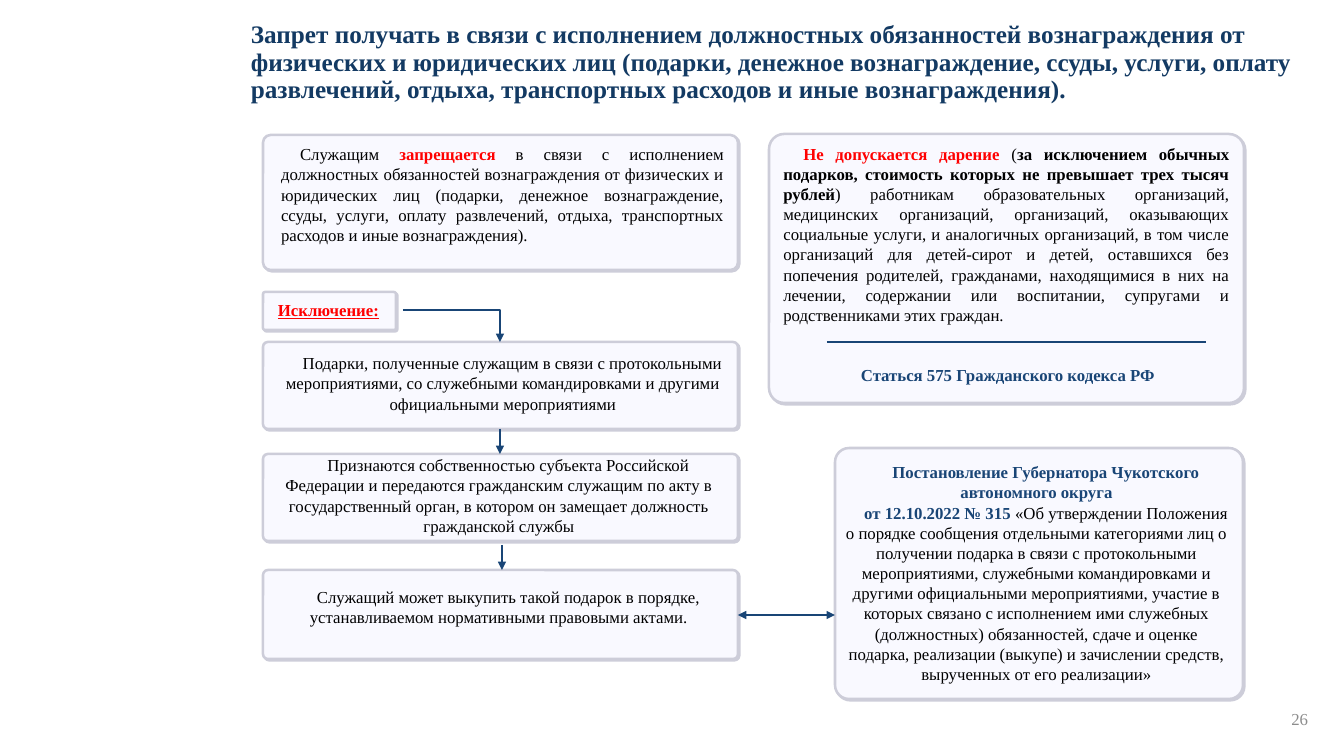
import pptx
import pptx.dml.color
import pptx.enum.shapes
import pptx.enum.text
import pptx.oxml.ns
import pptx.util
from lxml import etree

RGB = pptx.dml.color.RGBColor
ALIGN = pptx.enum.text.PP_ALIGN
ANCHOR = pptx.enum.text.MSO_ANCHOR
KIND = pptx.enum.shapes.MSO_CONNECTOR
Pt = pptx.util.Pt
qn = pptx.oxml.ns.qn

BLACK = RGB(0x00, 0x00, 0x00)
RED = RGB(0xFF, 0x00, 0x00)
NAVY = RGB(0x13, 0x3A, 0x63)
BLUE = RGB(0x19, 0x45, 0x76)
GRAY = RGB(0x8C, 0x8C, 0x8C)
PALE = RGB(0xF9, 0xF9, 0xFF)
EDGE = RGB(0xCD, 0xCD, 0xD9)

SCALE = 914400 / 100.8
LEFT, WIDE = 263, 475

PLAIN = {"color": BLACK, "bold": False}
STRONG = {"color": BLACK, "bold": True}
ALERT = {"color": RED, "bold": True}
MARK = {"color": RED, "bold": True, "underline": True}
LAW = {"color": BLUE, "bold": True}
HEAD = {"color": NAVY, "bold": True, "size": Pt(18)}
PAGE = {"color": GRAY, "bold": False}

BODY = {"alignment": ALIGN.JUSTIFY, "space_after": Pt(3)}
MID = {"alignment": ALIGN.CENTER, "space_after": Pt(3)}
TIGHT = {"alignment": ALIGN.CENTER}
FULL = {"alignment": ALIGN.JUSTIFY}
TITLE = {"alignment": ALIGN.LEFT, "line_spacing": 0.9}
RIGHT = {"alignment": ALIGN.RIGHT}


def px(num):
    return round(num * SCALE)


def apply(item, form):
    for name, value in form.items():
        setattr(item, name, value)


def write(frame, paras, form, indent=19):
    frame.word_wrap = True
    for i, runs in enumerate(paras):
        para = frame.paragraphs[0] if i == 0 else frame.add_paragraph()
        apply(para, form)
        para._p.get_or_add_pPr().set("indent", str(px(indent)))
        for text, look in runs:
            run = para.add_run()
            run.text = text
            font = {"name": "Times New Roman", "size": Pt(12), **look}
            run.font.color.rgb = font.pop("color")
            apply(run.font, font)


def add_box(slide, x, y, w, h):
    shape = slide.shapes.add_shape(
        pptx.enum.shapes.MSO_SHAPE.ROUNDED_RECTANGLE, px(x), px(y), px(w), px(h))
    shape.adjustments[0] = 0.056
    shape.fill.solid()
    shape.fill.fore_color.rgb = PALE
    shape.line.color.rgb = EDGE
    shape.line.width = Pt(1.8)
    shape.shadow.inherit = False
    glow = etree.SubElement(
        shape._element.spPr.find(qn("a:effectLst")), qn("a:outerShdw"),
        dist=str(Pt(1.4)), dir="2700000", algn="ctr", rotWithShape="0")
    etree.SubElement(glow, qn("a:srgbClr"), val=str(EDGE))
    shape.text_frame.vertical_anchor = ANCHOR.TOP
    return shape


def add_text(slide, x, y, w, h, paras, form, indent=19, **extra):
    frame = slide.shapes.add_textbox(px(x), px(y), px(w), px(h)).text_frame
    apply(frame, extra)
    write(frame, paras, form, indent)


def add_line(slide, x1, y1, x2, y2, ends=(), bent=False):
    line = slide.shapes.add_connector(
        KIND.ELBOW if bent else KIND.STRAIGHT, px(x1), px(y1), px(x2), px(y2))
    line.line.color.rgb = BLUE
    line.line.width = Pt(1)
    props = line._element.spPr
    if bent:
        props.find(qn("a:prstGeom")).set("prst", "bentConnector2")
    for end in ends:
        etree.SubElement(props.find(qn("a:ln")), qn(end), type="triangle")
    etree.SubElement(props, qn("a:effectLst"))


def main():
    deck = pptx.Presentation()
    deck.slide_width, deck.slide_height = px(1344), px(756)
    slide = deck.slides.add_slide(deck.slide_layouts[6])

    add_text(slide, 241, 13, 1093, 100, [[(
        "Запрет получать в связи с исполнением должностных обязанностей "
        "вознаграждения от физических и юридических лиц (подарки, денежное "
        "вознаграждение, ссуды, услуги, оплату развлечений, отдыха, "
        "транспортных расходов и иные вознаграждения).", HEAD)]],
        TITLE, 0, vertical_anchor=ANCHOR.MIDDLE)

    add_box(slide, LEFT, 292, 133, 38)
    for y, h in ((135, 135), (342, 87), (454, 87), (570, 89)):
        add_box(slide, LEFT, y, WIDE, h)
    add_box(slide, 835, 448, 408, 251)
    gift = add_box(slide, 769, 134, WIDE, 269)
    write(gift.text_frame, [[
        ("Не допускается дарение ", ALERT),
        ("(", PLAIN),
        ("за исключением обычных подарков, стоимость которых не превышает "
         "трех тысяч рублей", STRONG),
        (") работникам образовательных организаций, медицинских организаций, "
         "организаций, оказывающих социальные услуги, и аналогичных "
         "организаций, в том числе организаций для детей-сирот и детей, "
         "оставшихся без попечения родителей, гражданами, находящимися в них "
         "на лечении, содержании или воспитании, супругами и родственниками "
         "этих граждан.", PLAIN)]], FULL, 20)

    add_text(slide, 281, 144, 443, 125, [[
        ("Служащим ", PLAIN),
        ("запрещается", ALERT),
        (" в связи с исполнением должностных обязанностей вознаграждения от "
         "физических и юридических лиц (подарки, денежное вознаграждение, "
         "ссуды, услуги, оплату развлечений, отдыха, транспортных расходов и "
         "иные вознаграждения).", PLAIN)]], BODY,
        margin_left=0, margin_right=0, margin_top=0, margin_bottom=0)
    add_text(slide, 249, 295, 154, 30, [[("Исключение:", MARK)]], BODY)
    add_text(slide, 832, 360, 400, 30,
             [[("Статься 575 Гражданского кодекса РФ", LAW)]], BODY)

    steps = (
        (267, 348, 72, "Подарки, полученные служащим в связи с протокольными "
         "мероприятиями, со служебными командировками и другими официальными "
         "мероприятиями"),
        (LEFT, 450, 92, "Признаются собственностью субъекта Российской "
         "Федерации и передаются гражданским служащим по акту в "
         "государственный орган, в котором он замещает должность "
         "гражданской службы"),
        (LEFT, 582, 76, "Служащий может выкупить такой подарок в порядке, "
         "устанавливаемом нормативными правовыми актами."))
    for x, y, h, text in steps:
        add_text(slide, x, y, 472, h, [[(text, PLAIN)]], MID)

    add_text(slide, 835, 457, 403, 234, [
        [("Постановление Губернатора Чукотского автономного округа", LAW)],
        [("от 12.10.2022 № 315", LAW),
         (" «Об утверждении Положения о порядке сообщения отдельными "
          "категориями лиц о получении подарка в связи с протокольными "
          "мероприятиями, служебными командировками и другими официальными "
          "мероприятиями, участие в которых связано с исполнением ими "
          "служебных (должностных) обязанностей, сдаче и оценке подарка, "
          "реализации (выкупе) и зачислении средств, вырученных от его "
          "реализации»", PLAIN)]], TIGHT)

    add_line(slide, 827, 342, 1206, 342)
    add_line(slide, 403, 310, 500, 342, ["a:tailEnd"], True)
    add_line(slide, 500, 429, 500, 454, ["a:tailEnd"])
    add_line(slide, 502, 545, 502, 570, ["a:tailEnd"])
    add_line(slide, 835, 615, 738, 615, ["a:headEnd", "a:tailEnd"])
    add_text(slide, 1016, 699, 302, 40, [[("26", PAGE)]], RIGHT, 0,
             vertical_anchor=ANCHOR.MIDDLE)
    deck.save("out.pptx")


if __name__ == "__main__":
    main()
